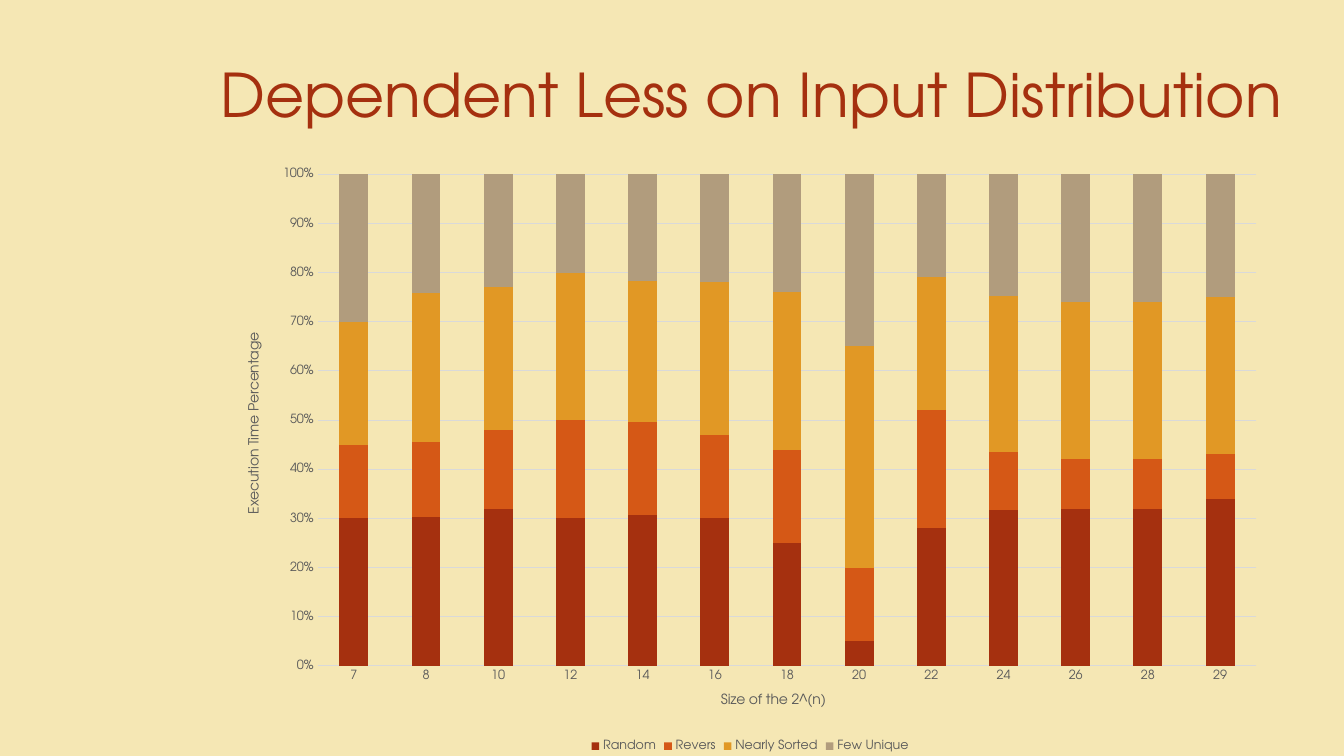
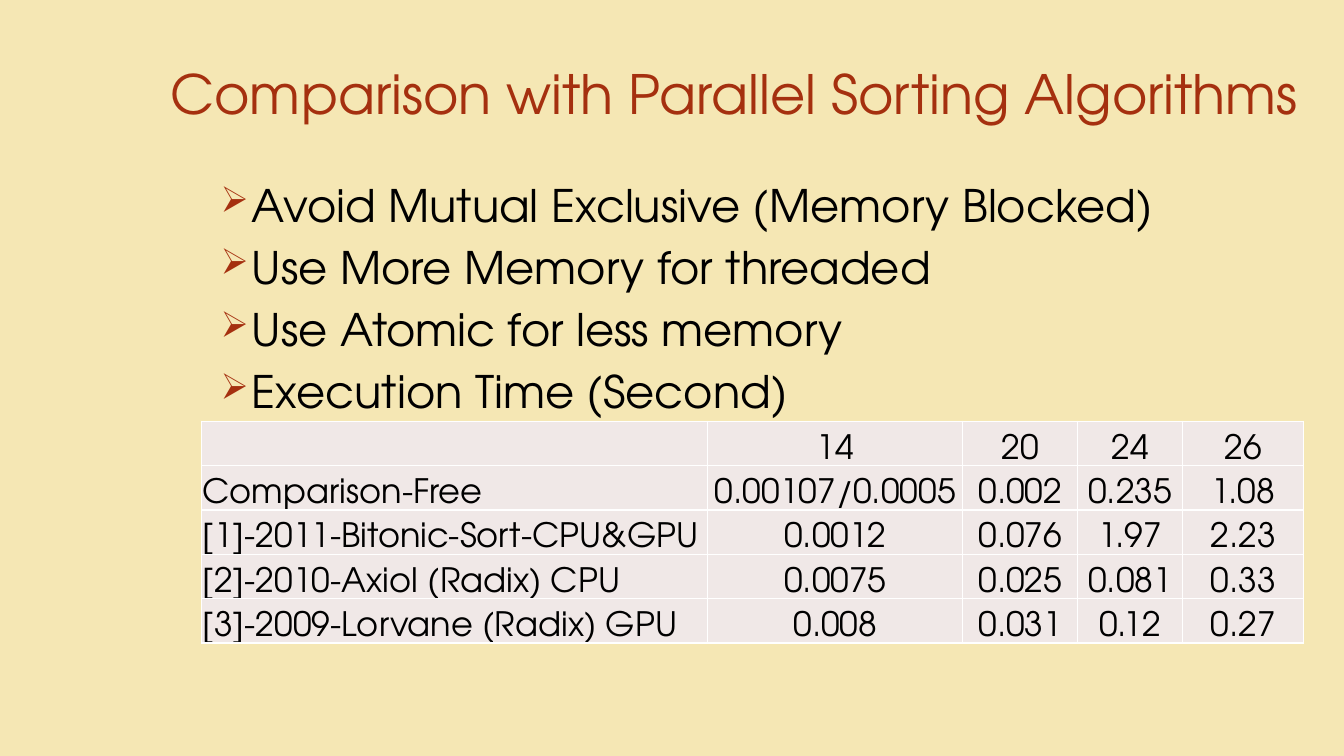
"""Builds two slides on sorting performance: a stacked chart and a comparison table."""
from dataclasses import dataclass

from lxml import etree
from pptx import Presentation
from pptx import util as u
from pptx.chart import data as cd
from pptx.dml.color import RGBColor
from pptx.enum import chart as ch, text as t
from pptx.oxml import ns


@dataclass(frozen=True)
class Theme:
    """Colours, font and type sizes shared by the slides."""
    font: str = "TeX Gyre Adventor"
    background: str = "F5E7B4"
    accent: str = "A5300F"
    ink: str = "000000"
    muted: str = "595959"
    grid: str = "D9D9D9"
    cell: str = "F0E8E7"
    border: str = "FFFFFF"
    series: tuple = ("A5300F", "D55816", "E19825", "B19C7D")
    body_size: float = 32
    table_size: float = 24
    axis_title_size: float = 10
    label_size: float = 9


def rgb(value):
    """Turn a hex string into a colour."""
    return RGBColor.from_string(value)


def add_xml(parent, tag, **attrs):
    """Append an element with the given attributes."""
    return etree.SubElement(parent, ns.qn(tag), attrs)


def place(parent, **position):
    """Give a chart part a manual layout in fractions of the chart."""
    layout = parent.find(ns.qn("c:layout"))
    if layout is None:
        layout = etree.Element(ns.qn("c:layout"))
        parent.insert(0, layout)
    manual = add_xml(layout, "c:manualLayout")
    if "w" in position:
        add_xml(manual, "c:layoutTarget", val="inner")
    for key in ("x", "y"):
        add_xml(manual, f"c:{key}Mode", val="edge")
    for key, value in position.items():
        add_xml(manual, f"c:{key}", val=str(value))


class Deck:
    """Holds the theme and the current slide."""

    def __init__(self, theme):
        """Start a widescreen presentation with the shared background."""
        self.theme = theme
        self.prs = Presentation()
        self.prs.slide_width = u.Inches(13.33)
        self.prs.slide_height = u.Inches(7.5)
        fill = self.prs.slide_master.background.fill
        fill.solid()
        fill.fore_color.rgb = rgb(theme.background)
        self.s = None

    def style(self, font, size, color):
        """Apply the theme font with a size and colour."""
        font.name = self.theme.font
        font.size = u.Pt(size)
        font.bold = False
        font.color.rgb = rgb(color)

    def run(self, p, text, size, color):
        """Add one styled run to a paragraph."""
        r = p.add_run()
        r.text = text
        self.style(r.font, size, color)

    def slide(self, title, left, width, size):
        """Add a title-only slide and set its title."""
        self.s = self.prs.slides.add_slide(self.prs.slide_layouts[5])
        sp = self.s.shapes.title
        sp.left, sp.top = u.Inches(left), u.Inches(0.3)
        sp.width, sp.height = u.Inches(width), u.Inches(1.25)
        tf = sp.text_frame
        tf.word_wrap = True
        tf.auto_size = t.MSO_AUTO_SIZE.NONE
        tf.vertical_anchor = t.MSO_ANCHOR.MIDDLE
        p = tf.paragraphs[0]
        p.alignment = t.PP_ALIGN.LEFT
        self.run(p, title, size, self.theme.accent)

    def bullets(self, box, lines):
        """Add a text box with arrow bullets."""
        tf = self.s.shapes.add_textbox(*map(u.Inches, box)).text_frame
        tf.word_wrap = True
        for i, line in enumerate(lines):
            p = tf.add_paragraph() if i else tf.paragraphs[0]
            p.space_before = u.Pt(6 if i else 0)
            pPr = p._p.get_or_add_pPr()
            pPr.set("marL", str(u.Inches(0.4)))
            pPr.set("indent", str(u.Inches(-0.31)))
            color = add_xml(pPr, "a:buClr")
            add_xml(color, "a:srgbClr", val=self.theme.accent)
            add_xml(pPr, "a:buSzPct", val="80000")
            add_xml(pPr, "a:buChar", char="➢")
            self.run(p, line, self.theme.body_size, self.theme.ink)

    def cell(self, cell, text, align):
        """Border, fill and write one table cell."""
        tcPr = cell._tc.get_or_add_tcPr()
        for side in "LRTB":
            ln = add_xml(tcPr, f"a:ln{side}", w=str(u.Pt(1)))
            add_xml(add_xml(ln, "a:solidFill"), "a:srgbClr", val=self.theme.border)
        cell.fill.solid()
        cell.fill.fore_color.rgb = rgb(self.theme.cell)
        cell.margin_left = cell.margin_right = cell.margin_top = u.Inches(0.01)
        cell.margin_bottom = 0
        cell.vertical_anchor = t.MSO_ANCHOR.BOTTOM
        p = cell.text_frame.paragraphs[0]
        p.alignment = align
        if text:
            self.run(p, text, self.theme.table_size, self.theme.ink)

    def table(self, left, top, widths, row_height, rows):
        """Add a table with a left-aligned first column."""
        table = self.s.shapes.add_table(
            len(rows), len(widths), u.Inches(left), u.Inches(top),
            u.Inches(sum(widths)), u.Inches(row_height * len(rows))).table
        for column, width in zip(table.columns, widths):
            column.width = u.Inches(width)
        for i, row in enumerate(rows):
            table.rows[i].height = u.Inches(row_height)
            for j, text in enumerate(row):
                align = t.PP_ALIGN.CENTER if j else t.PP_ALIGN.LEFT
                self.cell(table.cell(i, j), text, align)

    def axis(self, axis, title, x, y):
        """Style one chart axis and place its title."""
        axis.major_tick_mark = axis.minor_tick_mark = ch.XL_TICK_MARK.NONE
        self.style(axis.tick_labels.font, self.theme.label_size, self.theme.muted)
        p = axis.axis_title.text_frame.paragraphs[0]
        self.run(p, title, self.theme.axis_title_size, self.theme.muted)
        place(axis.axis_title._element, x=x, y=y)

    def stacked_chart(self, box, categories, series, category_title, value_title):
        """Add a 100% stacked column chart."""
        data = cd.CategoryChartData()
        data.categories = categories
        for name, values in series.items():
            data.add_series(name, values)
        chart = self.s.shapes.add_chart(
            ch.XL_CHART_TYPE.COLUMN_STACKED_100, *map(u.Inches, box), data).chart
        self.style(chart.font, self.theme.axis_title_size, self.theme.ink)
        chart.has_title = False
        chart.has_legend = True
        chart.legend.position = ch.XL_LEGEND_POSITION.BOTTOM
        chart.legend.include_in_layout = False
        self.style(chart.legend.font, self.theme.label_size, self.theme.muted)

        plot = chart.plots[0]
        plot.gap_width, plot.overlap = 150, 100
        plot.vary_by_categories = False
        for one, color in zip(plot.series, self.theme.series):
            one.format.fill.solid()
            one.format.fill.fore_color.rgb = rgb(color)
        place(chart._chartSpace.find(".//" + ns.qn("c:plotArea")),
              x=0.09, y=0.03, w=0.89, h=0.82)

        self.axis(chart.category_axis, category_title, 0.47, 0.89)
        values = chart.value_axis
        self.axis(values, value_title, 0.02, 0.29)
        values.axis_title.text_frame._txBody.bodyPr.set("rot", "-5400000")
        values.major_unit = 0.1
        values.tick_labels.number_format = "0%"
        values.tick_labels.number_format_is_linked = False
        values.format.line.fill.background()
        for line in (chart.category_axis.format.line, values.major_gridlines.format.line):
            line.color.rgb = rgb(self.theme.grid)
            line.width = u.Pt(0.75)


def main():
    """Build and save the slides."""
    deck = Deck(Theme())

    deck.slide("Dependent Less on Input Distribution", 2.09, 10.93, 43)
    deck.stacked_chart(
        (2.21, 1.55, 10.46, 5.95),
        ["7", "8", "10", "12", "14", "16", "18", "20", "22", "24", "26", "28", "29"],
        {
            "Random": (30, 30, 32, 30, 31, 30, 25, 5, 28, 32, 32, 32, 34),
            "Revers": (15, 15, 16, 20, 19, 17, 19, 15, 24, 12, 10, 10, 9),
            "Nearly Sorted": (25, 30, 29, 30, 29, 31, 32, 45, 27, 32, 32, 32, 32),
            "Few Unique": (30, 24, 23, 20, 22, 22, 24, 35, 21, 25, 26, 26, 25),
        },
        "Size of the 2^(n)", "Execution Time Percentage")

    deck.slide("Comparison with Parallel Sorting Algorithms", 1.59, 11.74, 38.7)
    deck.bullets((2, 1.71, 10.93, 5.25), [
        "Avoid Mutual Exclusive (Memory Blocked)",
        "Use More Memory for threaded",
        "Use Atomic for less memory",
        "Execution Time (Second)",
    ])
    deck.table(2, 4.18, (5.02, 2.53, 1.14, 1.04, 1.2), 0.44, [
        ("", "14", "20", "24", "26"),
        ("Comparison-Free", "0.00107/0.0005", "0.002", "0.235", "1.08"),
        ("[1]-2011-Bitonic-Sort-CPU&GPU", "0.0012", "0.076", "1.97", "2.23"),
        ("[2]-2010-Axiol (Radix) CPU", "0.0075", "0.025", "0.081", "0.33"),
        ("[3]-2009-Lorvane (Radix) GPU", "0.008", "0.031", "0.12", "0.27"),
    ])

    deck.prs.save("out.pptx")


if __name__ == "__main__":
    main()
